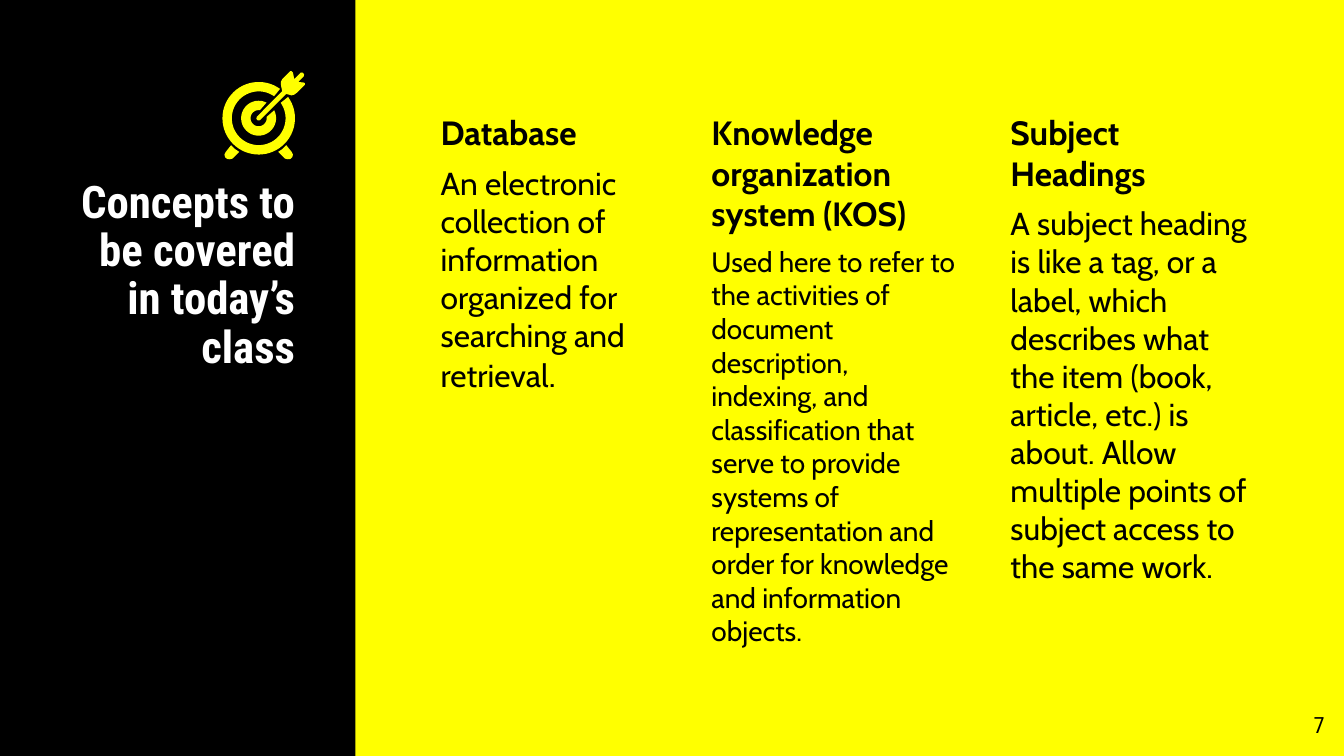
from math import cos, radians, sin

from pptx import Presentation
from pptx.dml.color import RGBColor
from pptx.enum.shapes import MSO_SHAPE as Shape
from pptx.enum.text import MSO_ANCHOR as Anchor, MSO_AUTO_SIZE as AutoSize, PP_ALIGN as Align
from pptx.util import Inches, Pt

BLACK = RGBColor(0x00, 0x00, 0x00)
WHITE = RGBColor(0xFF, 0xFF, 0xFF)
YELLOW = RGBColor(0xFF, 0xFF, 0x00)
HEADING_FONT = "Roboto Condensed"
BODY_FONT = "Cabin"

WIDTH, HEIGHT = 100, 56.25
TARGET_X, TARGET_Y = 19.25, 8.8
CONCEPT_TOP, CONCEPT_WIDTH, CONCEPT_HEIGHT = 7.35, 20.2, 41.5

CONCEPTS = [
    (31.8, "Database", 17,
     "An electronic collection of information organized for searching and retrieval", "."),
    (51.95, "Knowledge organization system (KOS)", 15,
     "Used here to refer to the activities of document description, indexing, and "
     "classification that serve to provide systems of representation and order for "
     "knowledge and information objects.", ""),
    (74.2, "Subject Headings", 17,
     "A subject heading is like a tag, or a label, which describes what the item "
     "(book, article, etc.) is about. Allow multiple points of subject access to "
     "the same work.", ""),
]

FOOT = [(17.2, 10.8), (16.8, 11.3), (16.7, 11.5), (16.75, 11.7), (16.9, 11.83),
        (17.1, 11.85), (17.3, 11.8), (17.8, 11.3), (17.5, 11.1)]
DART = [(21.7, 5.3), (21.6, 5.3), (21, 5.9), (20.9, 6.1), (20.9, 6.3), (21, 6.8),
        (19.1, 8.7), (19.08, 8.85), (19.15, 8.95), (19.3, 8.97), (19.4, 8.9),
        (21.3, 7), (21.7, 7.1), (21.9, 7.05), (22.1, 6.9), (22.7, 6.3), (22.7, 6.2),
        (22.6, 6.15), (22.2, 6.1), (22.6, 5.7), (22.63, 5.55), (22.55, 5.42),
        (22.4, 5.4), (22.3, 5.5), (21.9, 5.9), (21.8, 5.4)]


def grid(*units):
    return [Inches(unit / 10) for unit in units]


def write(paragraph, text, font=BODY_FONT, size=18, color=BLACK, bold=False,
          align=Align.LEFT, before=0, spacing=None):
    paragraph.alignment = align
    paragraph.space_before = Pt(before)
    paragraph.line_spacing = spacing
    run = paragraph.add_run()
    run.text = text
    run.font.name = font
    run.font.size = Pt(size)
    run.font.color.rgb = color
    run.font.bold = bold


def arc(radius, start, end, steps=60):
    angles = [radians(start + (end - start) * step / steps) for step in range(steps + 1)]
    return [(TARGET_X + radius * cos(angle), TARGET_Y - radius * sin(angle))
            for angle in angles]


def ring(outer, inner, outer_gap, inner_gap):
    return (arc(outer, 45 + outer_gap, 405 - outer_gap)
            + arc(inner, 405 - inner_gap, 45 + inner_gap))


class SlideBuilder:
    def __init__(self, presentation):
        self.slide = presentation.slides.add_slide(presentation.slide_layouts[5])
        self.shapes = self.slide.shapes

    def background(self, color):
        fill = self.slide.background.fill
        fill.solid()
        fill.fore_color.rgb = color

    def paint(self, shape, color):
        shape.shadow.inherit = False
        shape.fill.solid()
        shape.fill.fore_color.rgb = color
        shape.line.fill.background()

    def panel(self, left, top, width, height, color):
        shape = self.shapes.add_shape(Shape.RECTANGLE, *grid(left, top, width, height))
        self.paint(shape, color)
        self.shapes[0].element.addprevious(shape.element)

    def frame(self, shape):
        frame = shape.text_frame
        frame.word_wrap = True
        frame.auto_size = AutoSize.NONE
        frame.vertical_anchor = Anchor.TOP
        frame.margin_left, frame.margin_top, frame.margin_right, frame.margin_bottom = (
            grid(1, 1, 1, 1))
        return frame

    def title(self, text, left, top, width, height, **style):
        shape = self.shapes.title
        shape.left, shape.top, shape.width, shape.height = grid(left, top, width, height)
        write(self.frame(shape).paragraphs[0], text, **style)

    def text(self, left, top, width, height):
        return self.frame(self.shapes.add_textbox(*grid(left, top, width, height)))

    def concept(self, left, heading, size, body, ending):
        frame = self.text(left, CONCEPT_TOP, CONCEPT_WIDTH, CONCEPT_HEIGHT)
        write(frame.paragraphs[0], heading, bold=True, before=6)
        paragraph = frame.add_paragraph()
        write(paragraph, body, size=size, before=6)
        if ending:
            write(paragraph, ending, before=6)

    def icon(self, outlines, color):
        group = self.shapes.add_group_shape()
        for outline in outlines:
            points = [grid(*point) for point in outline]
            builder = group.shapes.build_freeform(*points[0])
            builder.add_line_segments(points[1:], close=True)
            self.paint(builder.convert_to_shape(), color)


def main():
    presentation = Presentation()
    presentation.slide_width, presentation.slide_height = grid(WIDTH, HEIGHT)
    builder = SlideBuilder(presentation)
    builder.background(YELLOW)
    builder.panel(0, 0, 26.45, HEIGHT, BLACK)
    builder.title("Concepts to be covered in today’s class", 4.35, 12.35, 18.6, 16.2,
                  font=HEADING_FONT, size=24, color=WHITE, bold=True,
                  align=Align.RIGHT, spacing=0.9)
    for concept in CONCEPTS:
        builder.concept(*concept)
    right_foot = [(2 * TARGET_X - x, y) for x, y in FOOT]
    builder.icon([ring(2.7, 2, 9, 10), ring(1.3, 0.6, 18, 36), FOOT, right_foot, DART],
                 YELLOW)
    number = builder.text(93.55, 51.95, 6, 4.3)
    write(number.paragraphs[0], "7", font=HEADING_FONT, size=12, align=Align.RIGHT)
    presentation.save("out.pptx")


if __name__ == "__main__":
    main()
